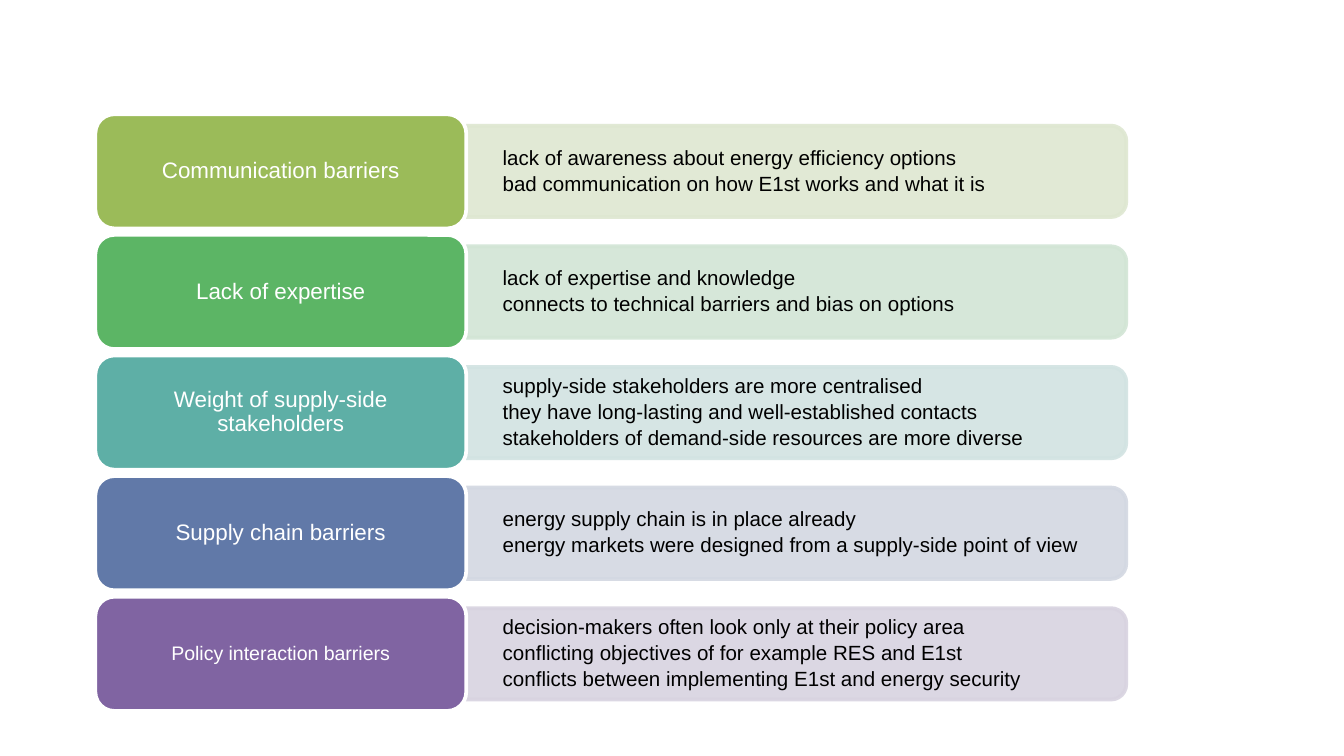
from typing import NamedTuple

from lxml.etree import SubElement
from pptx import Presentation
from pptx.dml.color import RGBColor
from pptx.enum.shapes import MSO_SHAPE as Shape
from pptx.enum.text import MSO_ANCHOR as Anchor, PP_ALIGN as Align
from pptx.oxml.ns import qn
from pptx.util import Inches, Pt


class Row(NamedTuple):
    title: str
    fill: str
    tint: str
    notes: list[str]
    size: float = 12


ROWS = [
    Row("Communication barriers", "9BBB59", "DEE7D1", [
        "lack of awareness about energy efficiency options",
        "bad communication on how E1st works and what it is"]),
    Row("Lack of expertise", "5CB565", "D2E5D5", [
        "lack of expertise and knowledge",
        "connects to technical barriers and bias on options"]),
    Row("Weight of supply-side stakeholders", "5EAFA6", "D2E3E2", [
        "supply-side stakeholders are more centralised",
        "they have long-lasting and well-established contacts",
        "stakeholders of demand-side resources are more diverse"]),
    Row("Supply chain barriers", "6179A8", "D3D8E2", [
        "energy supply chain is in place already",
        "energy markets were designed from a supply-side point of view"]),
    Row("Policy interaction barriers", "8064A2", "D8D3E0", [
        "decision-makers often look only at their policy area",
        "conflicting objectives of for example RES and E1st",
        "conflicts between implementing E1st and energy security"], 10.5),
]

WIDTH = 10
HEIGHT = WIDTH * 9 / 16
LEFT, TOP = 0.71, 0.85
CARD_W, CARD_H = 2.76, 0.85
BAR_W, BAR_H = 4.91, 0.68
NOTE_W, NOTE_H = 4.87, 0.62
PITCH = (4.44 - TOP) / (len(ROWS) - 1)


def rgb(color: str) -> RGBColor:
    return RGBColor.from_string(color)


def add_box(slide, kind: Shape, x: float, y: float, w: float, h: float, *,
            fill: str, line: str, alpha: int = 100):
    """Add a filled, outlined shape with an opacity in percent."""
    box = slide.shapes.add_shape(kind, Inches(x), Inches(y), Inches(w), Inches(h))
    box.shadow.inherit = False
    box.fill.solid()
    box.fill.fore_color.rgb = rgb(fill)
    box.line.color.rgb = rgb(line)
    box.line.width = Pt(2)
    if alpha < 100:
        for node in box.element.spPr.findall(".//" + qn("a:srgbClr")):
            SubElement(node, qn("a:alpha"), val=str(alpha * 1000))
    return box


def write(box, lines: list[str], *, size: float, color: str, align: Align,
          gap: float, pad: tuple[float, float]) -> None:
    frame = box.text_frame
    frame.word_wrap = True
    frame.vertical_anchor = Anchor.MIDDLE
    frame.margin_left = frame.margin_right = Inches(pad[0])
    frame.margin_top = frame.margin_bottom = Inches(pad[1])
    for i, line in enumerate(lines):
        para = frame.add_paragraph() if i else frame.paragraphs[0]
        para.text = line
        para.alignment = align
        para.line_spacing = 0.9
        para.space_after = Pt(gap)
        para.font.size = Pt(size)
        para.font.name = "Arial"
        para.font.color.rgb = rgb(color)


def add_row(slide, row: Row, top: float) -> None:
    mid = top + CARD_H / 2
    edge = LEFT + CARD_W
    # The bar stands upright and is turned so that its round end faces right.
    bar = add_box(slide, Shape.ROUND_2_SAME_RECTANGLE,
                  edge + (BAR_W - BAR_H) / 2, mid - BAR_W / 2, BAR_H, BAR_W,
                  fill=row.tint, line=row.tint, alpha=90)
    bar.rotation = 90
    note = slide.shapes.add_textbox(Inches(edge), Inches(mid - NOTE_H / 2),
                                    Inches(NOTE_W), Inches(NOTE_H))
    write(note, row.notes, size=11, color="000000", align=Align.LEFT,
          gap=2, pad=(0.27, 0.14))
    card = add_box(slide, Shape.ROUNDED_RECTANGLE, LEFT, top, CARD_W, CARD_H,
                   fill=row.fill, line="FFFFFF")
    write(card, [row.title], size=row.size, color="FFFFFF", align=Align.CENTER,
          gap=0, pad=(0.09, 0.07))


def main() -> None:
    deck = Presentation()
    deck.slide_width, deck.slide_height = Inches(WIDTH), Inches(HEIGHT)
    slide = deck.slides.add_slide(deck.slide_layouts[6])
    for i, row in enumerate(ROWS):
        add_row(slide, row, TOP + i * PITCH)
    deck.save("out.pptx")


if __name__ == "__main__":
    main()
